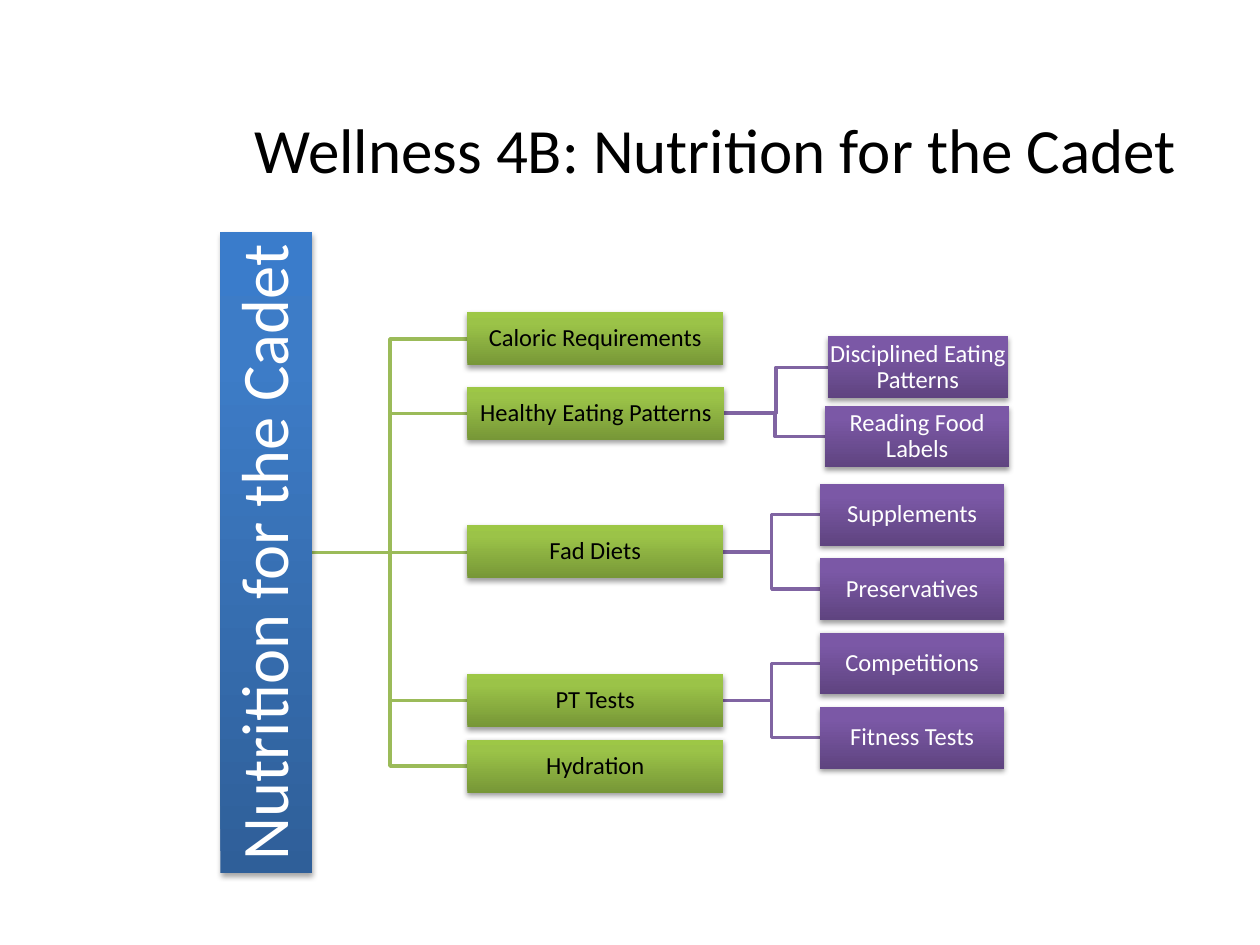
"""Build a slide with a topic tree on nutrition for cadets."""
from dataclasses import dataclass
from typing import Any

from pptx import Presentation, oxml, util as u
from pptx.dml.color import RGBColor
from pptx.enum import shapes as s, text as t
from pptx.oxml import ns


@dataclass(frozen=True)
class Look:
    stops: tuple[str, str, str]
    ink: str
    line: str = ""
    size: int = 14
    inset: float = 0.01
    turn: int = 0
    alpha: int = 38
    drop: float = 1.6


@dataclass(frozen=True)
class Node:
    name: str
    x: float
    y: float
    w: float
    h: float
    look: Look
    kids: tuple["Node", ...] = ()

    @property
    def mid(self) -> float:
        return self.y + self.h / 2


BLUE = Look(("2F5F99", "3D7CC7", "3A7CCB"), "FFFFFF",
            size=38, inset=0.03, turn=270, alpha=35, drop=1.8)
GREEN = Look(("779737", "9BC348", "9DC746"), "000000", "9BBB59")
PLUM = Look(("5F4480", "7B58A6", "7C57A8"), "FFFFFF", "8064A2")


def topic(name: str, y: float, *kids: Node, w: float = 2.03) -> Node:
    """Return a green topic box."""
    return Node(name, 3.71, y, w, 0.42, GREEN, kids)


def leaf(name: str, y: float, x: float = 6.51, w: float = 1.46) -> Node:
    """Return a purple detail box."""
    return Node(name, x, y, w, 0.49, PLUM)


ROOT = Node("Nutrition for the Cadet", 1.75, 1.84, 0.73, 5.09, BLUE, (
    topic("Caloric Requirements", 2.48),
    topic("Healthy Eating Patterns", 3.07,
          leaf("Disciplined Eating Patterns", 2.67, 6.57, 1.43),
          leaf("Reading Food Labels", 3.22, 6.55), w=2.04),
    topic("Fad Diets", 4.17,
          leaf("Supplements", 3.84), leaf("Preservatives", 4.43)),
    topic("PT Tests", 5.35,
          leaf("Competitions", 5.02), leaf("Fitness Tests", 5.61)),
    topic("Hydration", 5.87),
))


def tint(code: str) -> RGBColor:
    """Return the colour for a hex string."""
    return RGBColor.from_string(code)


def put(item: Any, form: dict[str, Any]) -> None:
    """Set each format value on an item."""
    for key, val in form.items():
        setattr(item, key, val)


def write(frame: Any, words: str, size: int, ink: str, **form: Any) -> None:
    """Write one styled paragraph."""
    para = frame.paragraphs[0]
    put(para, form)
    run = para.add_run()
    put(run, {"text": words})
    put(run.font, {"size": u.Pt(size), "name": "Calibri"})
    run.font.color.rgb = tint(ink)


def shade(box: Any, look: Look) -> None:
    """Give a box its upward gradient and soft shadow."""
    box.fill.background()
    stops = "".join(
        f'<a:gs pos="{pos}000"><a:srgbClr val="{code}"/></a:gs>'
        for pos, code in zip((0, 80, 100), look.stops))
    grad = oxml.parse_xml(
        f'<a:gradFill {ns.nsdecls("a")} rotWithShape="0"><a:gsLst>{stops}'
        '</a:gsLst><a:lin ang="16200000" scaled="0"/></a:gradFill>')
    prop = box._element.spPr
    prop.replace(prop.find(ns.qn("a:noFill")), grad)
    box.line.fill.background()
    box.shadow.inherit = False
    prop.find(ns.qn("a:effectLst")).append(oxml.parse_xml(
        f'<a:outerShdw {ns.nsdecls("a")} blurRad="{u.Pt(3.1)}" '
        f'dist="{u.Pt(look.drop)}" dir="5400000" rotWithShape="0">'
        f'<a:srgbClr val="000000"><a:alpha val="{look.alpha}000"/>'
        '</a:srgbClr></a:outerShdw>'))


def draw(tree: Any, node: Node) -> None:
    """Draw a box and the boxes below it."""
    look = node.look
    wide, high = (node.h, node.w) if look.turn else (node.w, node.h)
    left = node.x + (node.w - wide) / 2
    box = tree.add_shape(s.MSO_SHAPE.RECTANGLE, u.Inches(left),
                         u.Inches(node.mid - high / 2),
                         u.Inches(wide), u.Inches(high))
    box.rotation = look.turn
    shade(box, look)
    sides = ("left", "top", "right", "bottom")
    form = {f"margin_{side}": u.Inches(look.inset) for side in sides}
    put(box.text_frame, form | {"word_wrap": True,
                                "vertical_anchor": t.MSO_ANCHOR.MIDDLE})
    write(box.text_frame, node.name, look.size, look.ink,
          alignment=t.PP_ALIGN.CENTER, line_spacing=0.9)
    for kid in node.kids:
        draw(tree, kid)


def link(tree: Any, node: Node) -> None:
    """Draw the lines from a box to those below it."""
    for kid in node.kids:
        start = node.x + node.w
        bend = (start + kid.x) / 2
        spots = [(u.Inches(x), u.Inches(y)) for x, y in (
            (start, node.mid), (bend, node.mid),
            (bend, kid.mid), (kid.x, kid.mid))]
        if abs(node.mid - kid.mid) < 0.02:
            (x, y), end = spots[0], spots[-1][0]
            wire = tree.add_connector(s.MSO_CONNECTOR.STRAIGHT, x, y, end, y)
            prop = wire._element.spPr
            prop.append(oxml.parse_xml(f'<a:effectLst {ns.nsdecls("a")}/>'))
        else:
            path = tree.build_freeform(*spots[0])
            path.add_line_segments(spots[1:], close=False)
            wire = path.convert_to_shape()
            wire.fill.background()
            wire.shadow.inherit = False
        wire.line.width = u.Pt(2)
        wire.line.color.rgb = tint(kid.look.line)
        link(tree, kid)


def main() -> None:
    """Build and save the slide."""
    deck = Presentation()
    put(deck, {"slide_width": u.Inches(10), "slide_height": u.Inches(7.5)})
    tree = deck.slides.add_slide(deck.slide_layouts[6]).shapes
    head = tree.add_textbox(u.Inches(1.92), u.Inches(0.83),
                            u.Inches(7.83), u.Inches(0.71)).text_frame
    put(head, {"word_wrap": True,
               "auto_size": t.MSO_AUTO_SIZE.SHAPE_TO_FIT_TEXT})
    write(head, "Wellness 4B: Nutrition for the Cadet", 36, "000000")
    link(tree, ROOT)
    draw(tree, ROOT)
    deck.save("out.pptx")


if __name__ == "__main__":
    main()
